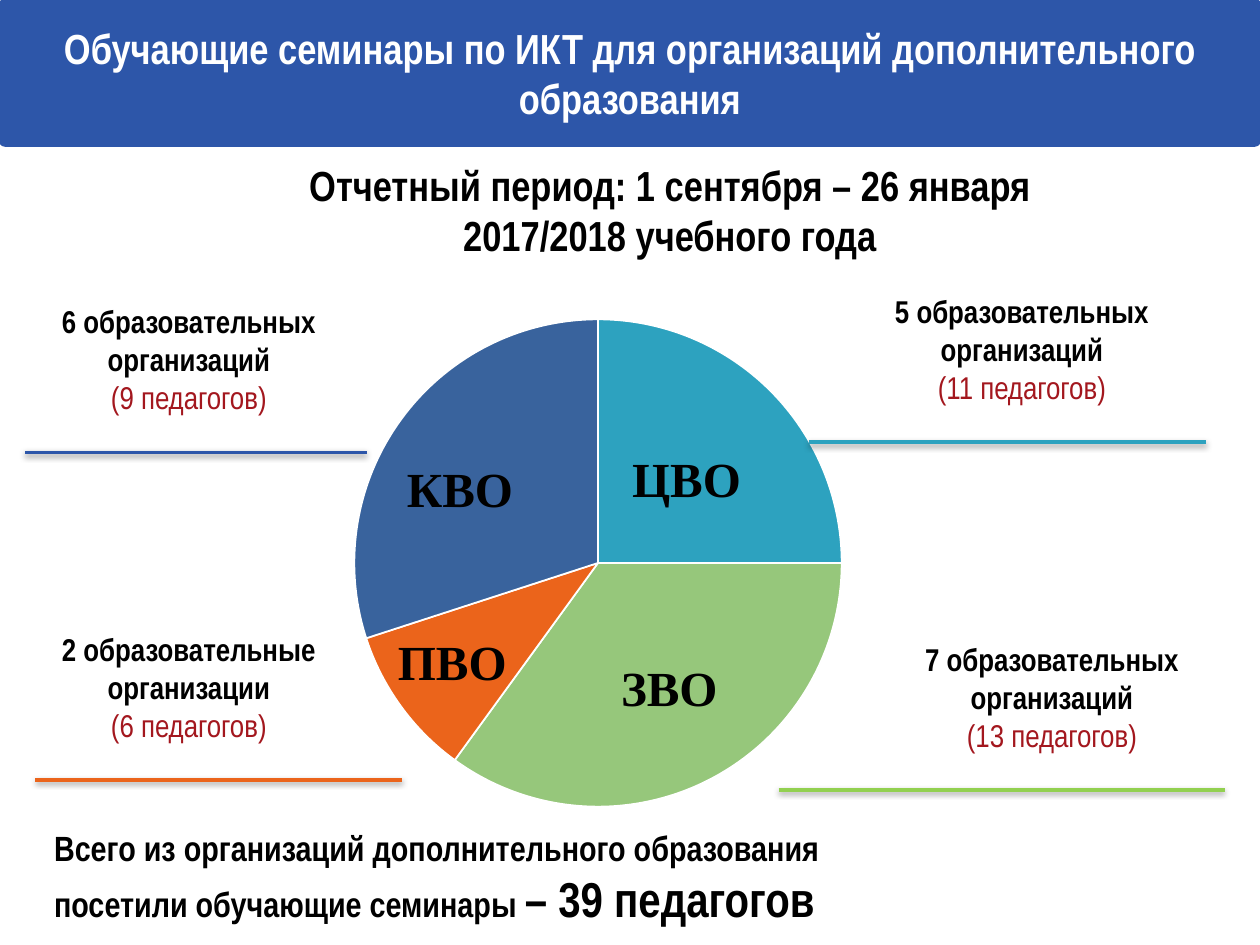
import pptx
import pptx.util
import pptx.chart.data
import pptx.dml.color
import pptx.enum.chart
import pptx.enum.shapes
import pptx.enum.text
import pptx.oxml

Pt = pptx.util.Pt
Align = pptx.enum.text.PP_ALIGN
Anchor = pptx.enum.text.MSO_ANCHOR
NARROW = "Arial Narrow"
SERIF = "Times New Roman"
BLUE = "2D56A9"
BLACK = "000000"
RED = "A3171E"
SHADOW = """<a:effectLst xmlns:a="http://schemas.openxmlformats.org/drawingml/2006/main">
<a:outerShdw blurRad="40000" dist="20000" dir="5400000" rotWithShape="0">
<a:srgbClr val="000000"><a:alpha val="38000"/></a:srgbClr></a:outerShdw></a:effectLst>"""


def color(code):
    return pptx.dml.color.RGBColor.from_string(code)


def write(box, paragraphs, font, align=Align.CENTER, anchor=Anchor.TOP, wrap=True):
    frame = box.text_frame
    frame.word_wrap = wrap
    frame.vertical_anchor = anchor
    for index, runs in enumerate(paragraphs):
        para = frame.add_paragraph() if index else frame.paragraphs[0]
        para.alignment = align
        for text, size, code, bold in runs:
            span = para.add_run()
            span.text = text
            span.font.name = font
            span.font.size = Pt(size)
            span.font.bold = bold
            span.font.color.rgb = color(code)


deck = pptx.Presentation()
deck.slide_width = Pt(720)
deck.slide_height = Pt(540)
page = deck.slides.add_slide(deck.slide_layouts[6])
shapes = page.shapes
ROUNDED = pptx.enum.shapes.MSO_SHAPE.ROUNDED_RECTANGLE

banner = shapes.add_shape(ROUNDED, Pt(0), Pt(0), Pt(720), Pt(83))
banner.adjustments[0] = 0.04
banner.shadow.inherit = False
banner.fill.solid()
banner.fill.fore_color.rgb = color(BLUE)
banner.line.color.rgb = color(BLUE)
banner.line.width = Pt(2)
title = "Обучающие семинары по ИКТ для организаций дополнительного образования"
write(banner, [[(title, 24, "FFFFFF", True)]], NARROW, anchor=Anchor.MIDDLE)

period = shapes.add_shape(ROUNDED, Pt(121.7), Pt(88.6), Pt(522), Pt(62.6))
period.shadow.inherit = False
period.fill.background()
period.line.fill.background()
dates = "Отчетный период: 1 сентября – 26 января 2017/2018 учебного года"
write(period, [[(dates, 24, BLACK, True)]], NARROW, anchor=Anchor.MIDDLE)

data = pptx.chart.data.CategoryChartData()
data.categories = ["1", "2", "3", "4"]
data.add_series("Series 1", (25, 35, 10, 30))
chart = shapes.add_chart(
    pptx.enum.chart.XL_CHART_TYPE.PIE, Pt(182.9), Pt(173.5), Pt(314.6), Pt(299.5), data
).chart
chart.has_legend = False
chart.has_title = False
chart.font.name = "Calibri"
chart.font.size = Pt(18)
chart.font.color.rgb = color(BLACK)
plot = chart.plots[0]
plot.vary_by_categories = True
for index, code in enumerate(["2DA2BF", "96C77B", "EB641B", "39639D"]):
    wedge = plot.series[0].points[index].format
    wedge.fill.solid()
    wedge.fill.fore_color.rgb = color(code)
    wedge.line.color.rgb = color("FFFFFF")
    wedge.line.width = Pt(1)
area = chart._chartSpace.chart.plotArea
for layout in area.findall(pptx.oxml.ns.qn("c:layout")):
    area.remove(layout)
area.insert(0, pptx.oxml.parse_xml(
    """<c:layout xmlns:c="http://schemas.openxmlformats.org/drawingml/2006/chart"><c:manualLayout>
<c:layoutTarget val="inner"/><c:xMode val="edge"/><c:yMode val="edge"/>
<c:x val="0.06"/><c:y val="0.03"/><c:w val="0.89"/><c:h val="0.93"/></c:manualLayout></c:layout>"""
))

for name, left, top, width in [
    ("КВО", 225.4, 258.5, 75.6),
    ("ЦВО", 354.2, 252.7, 77),
    ("ЗВО", 347.8, 372.2, 70.6),
    ("ПВО", 220.3, 357.1, 77),
]:
    box = shapes.add_textbox(Pt(left), Pt(top), Pt(width), Pt(41))
    write(box, [[(name, 28, BLACK, True)]], SERIF, align=Align.LEFT, wrap=False)

for schools, teachers, left, top, start, end, level, code in [
    ("6 образовательных организаций", "(9 педагогов)", 8.6, 169.2, 14.4, 209.5, 258.5, BLUE),
    ("5 образовательных организаций", "(11 педагогов)", 484.6, 163.4, 462.2, 689, 252.7, "2DA2BF"),
    ("7 образовательных организаций", "(13 педагогов)", 501.8, 362.2, 445, 699.8, 451.4, "92D050"),
    ("2 образовательные организации", "(6 педагогов)", 8.6, 356.4, 229.7, 20.2, 445.7, "EB641B"),
]:
    box = shapes.add_textbox(Pt(left), Pt(top), Pt(198.7), Pt(72.7))
    write(box, [[(schools, 18, BLACK, True)], [(teachers, 18, RED, False)]], NARROW)
    rule = shapes.add_connector(
        pptx.enum.shapes.MSO_CONNECTOR.STRAIGHT, Pt(start), Pt(level), Pt(end), Pt(level)
    )
    rule.line.color.rgb = color(code)
    rule.line.width = Pt(2)
    rule._element.spPr.append(pptx.oxml.parse_xml(SHADOW))

total = shapes.add_textbox(Pt(23.8), Pt(468.7), Pt(591.8), Pt(65.5))
write(total, [
    [("Всего из организаций дополнительного образования", 20, BLACK, True)],
    [("посетили обучающие семинары ", 20, BLACK, True), ("– 39 педагогов", 28, BLACK, True)],
], NARROW, align=Align.LEFT)

deck.save("out.pptx")
